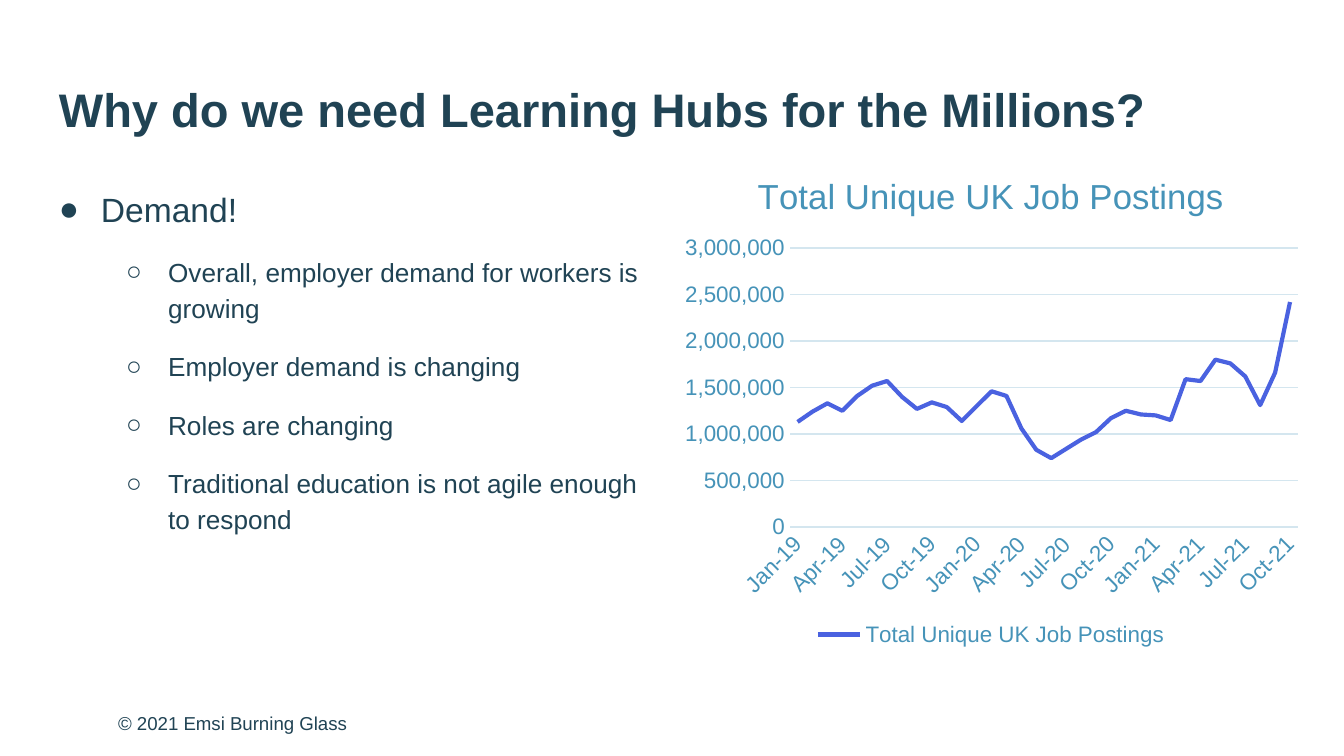
from dataclasses import dataclass

from lxml import etree
from pptx import Presentation
from pptx.chart.data import CategoryChartData
from pptx.dml.color import RGBColor
from pptx.enum.chart import XL_CHART_TYPE, XL_LEGEND_POSITION, XL_TICK_MARK
from pptx.enum.text import MSO_ANCHOR
from pptx.oxml import parse_xml
from pptx.oxml.ns import nsdecls, qn
from pptx.util import Pt

LINE_CHART = XL_CHART_TYPE.LINE
LEGEND_BOTTOM = XL_LEGEND_POSITION.BOTTOM
NO_TICKS = XL_TICK_MARK.NONE
ANCHOR_TOP = MSO_ANCHOR.TOP
ANCHOR_MIDDLE = MSO_ANCHOR.MIDDLE


@dataclass(frozen=True)
class Theme:
    font: str = "Arial"
    ink: str = "204354"
    chart_text: str = "4693B8"
    grid: str = "D4E6EF"
    series: str = "4A62E0"
    title_size: float = 25.2
    chart_title_size: float = 18.6
    topic_size: float = 18
    point_size: float = 14
    axis_size: float = 12
    footer_size: float = 10


CHART_TITLE = "Total Unique UK Job Postings"
MONTHS = "Jan Feb Mar Apr May Jun Jul Aug Sep Oct Nov Dec".split()
CATEGORIES = [f"{month}-{year}" for year in (19, 20, 21) for month in MONTHS][:34]
POSTINGS_IN_TEN_THOUSANDS = [
    113, 124, 133, 125, 141, 152, 157, 140, 127, 134, 129, 114,
    130, 146, 141, 106, 83, 74, 84, 94, 102, 117, 125, 121,
    120, 115, 159, 157, 180, 176, 162, 131, 166, 242,
]
POINTS = [
    "Overall, employer demand for workers is growing",
    "Employer demand is changing",
    "Roles are changing",
    "Traditional education is not agile enough to respond",
]
PLOT_LAYOUT = {"x": 0.185, "y": 0.197, "w": 0.795, "h": 0.555}


def set_all(target, values):
    for name, value in values.items():
        setattr(target, name, value)


class SlideBuilder:
    def __init__(self, slide, theme):
        self.slide = slide
        self.theme = theme

    def style_font(self, font, size, color, bold=False):
        set_all(font, {"name": self.theme.font, "size": Pt(size), "bold": bold})
        font.color.rgb = RGBColor.from_string(color)

    def text_frame(self, left, top, width, height, anchor=ANCHOR_TOP):
        box = self.slide.shapes.add_textbox(Pt(left), Pt(top), Pt(width), Pt(height))
        frame = box.text_frame
        set_all(frame, {"word_wrap": True, "vertical_anchor": anchor})
        sides = ("left", "top", "right", "bottom")
        set_all(frame, {f"margin_{side}": Pt(7.2) for side in sides})
        return frame

    def text(self, text, bounds, size, bold=False, anchor=ANCHOR_TOP):
        para = self.text_frame(*bounds, anchor=anchor).paragraphs[0]
        span = para.add_run()
        span.text = text
        self.style_font(span.font, size, self.theme.ink, bold)

    def bullet(self, para, symbol, indent):
        """Give a paragraph a hanging bullet."""
        properties = para._p.get_or_add_pPr()
        properties.set("marL", str(Pt(indent)))
        properties.set("indent", str(Pt(-22.5)))
        color = etree.SubElement(properties, qn("a:buClr"))
        etree.SubElement(color, qn("a:srgbClr"), val=self.theme.ink)
        etree.SubElement(properties, qn("a:buFont"), typeface=self.theme.font)
        etree.SubElement(properties, qn("a:buChar"), char=symbol)

    def outline(self, topic, points, bounds):
        """Write a topic with its points one level below."""
        frame = self.text_frame(*bounds)
        for index, text in enumerate([topic, *points]):
            if index == 0:
                para, level, symbol, indent = frame.paragraphs[0], 0, "●", 22.5
                size = self.theme.topic_size
            else:
                para, level, symbol, indent = frame.add_paragraph(), 1, "○", 58.5
                size = self.theme.point_size
            set_all(para, {"level": level, "line_spacing": 1.15, "space_after": Pt(12)})
            self.bullet(para, symbol, indent)
            span = para.add_run()
            span.text = text
            self.style_font(span.font, size, self.theme.ink)

    def grid_line(self, line):
        line.color.rgb = RGBColor.from_string(self.theme.grid)
        line.width = Pt(0.75)

    def line_chart(self, title, categories, values, bounds):
        theme = self.theme
        data = CategoryChartData()
        data.categories = categories
        data.add_series(title, values)
        frame = self.slide.shapes.add_chart(LINE_CHART, *map(Pt, bounds), data)
        chart = frame.chart
        self.style_font(chart.font, theme.footer_size, theme.ink)

        chart.has_title = True
        heading = chart.chart_title.text_frame
        heading.text = title
        span = heading.paragraphs[0].runs[0]
        self.style_font(span.font, theme.chart_title_size, theme.chart_text)

        chart.has_legend = True
        set_all(chart.legend, {"position": LEGEND_BOTTOM, "include_in_layout": False})
        self.style_font(chart.legend.font, theme.axis_size, theme.chart_text)

        series = chart.plots[0].series[0]
        series.smooth = False
        series.format.line.color.rgb = RGBColor.from_string(theme.series)
        series.format.line.width = Pt(2.25)
        self.style_axes(chart.category_axis, chart.value_axis)
        self.place_plot(chart)

    def style_axes(self, months, amounts):
        for axis in (months, amounts):
            set_all(axis, {"major_tick_mark": NO_TICKS, "minor_tick_mark": NO_TICKS})
            self.style_font(axis.tick_labels.font, self.theme.axis_size, self.theme.chart_text)
        self.grid_line(months.format.line)
        months._element.find(qn("c:txPr")).find(qn("a:bodyPr")).set("rot", "-2700000")
        skip = parse_xml(f'<c:tickLblSkip {nsdecls("c")} val="3"/>')
        months._element.find(qn("c:noMultiLvlLbl")).addprevious(skip)

        set_all(amounts, {"minimum_scale": 0, "maximum_scale": 3000000,
                          "major_unit": 500000, "has_major_gridlines": True})
        set_all(amounts.tick_labels, {"number_format": r"#,##0;[Red]\ \(#,##0\)",
                                      "number_format_is_linked": False})
        amounts.format.line.fill.background()
        self.grid_line(amounts.major_gridlines.format.line)

    def place_plot(self, chart):
        """Fix the inner plot area as fractions of the chart."""
        area = chart._chartSpace.find(qn("c:chart")).find(qn("c:plotArea"))
        for old_layout in area.findall(qn("c:layout")):
            area.remove(old_layout)
        layout = parse_xml(f'<c:layout {nsdecls("c")}/>')
        manual = etree.SubElement(layout, qn("c:manualLayout"))
        settings = {"layoutTarget": "inner", "xMode": "edge", "yMode": "edge", **PLOT_LAYOUT}
        for name, value in settings.items():
            etree.SubElement(manual, qn(f"c:{name}"), val=str(value))
        area.insert(0, layout)


def main():
    deck = Presentation()
    set_all(deck, {"slide_width": Pt(720), "slide_height": Pt(405)})
    theme = Theme()
    page = SlideBuilder(deck.slides.add_slide(deck.slide_layouts[6]), theme)
    page.text("© 2021 Emsi Burning Glass", (56.2, 375.1, 218, 26.6), theme.footer_size)
    page.text("Why do we need Learning Hubs for the Millions?", (24.5, 35.3, 671, 45.4),
              theme.title_size, bold=True, anchor=ANCHOR_MIDDLE)
    page.outline("Demand!", POINTS, (24.5, 90.7, 335.5, 269.3))
    postings = [count * 10000 for count in POSTINGS_IN_TEN_THOUSANDS]
    page.line_chart(CHART_TITLE, CATEGORIES, postings, (360, 79.9, 342, 269.3))
    deck.save("out.pptx")


if __name__ == "__main__":
    main()
